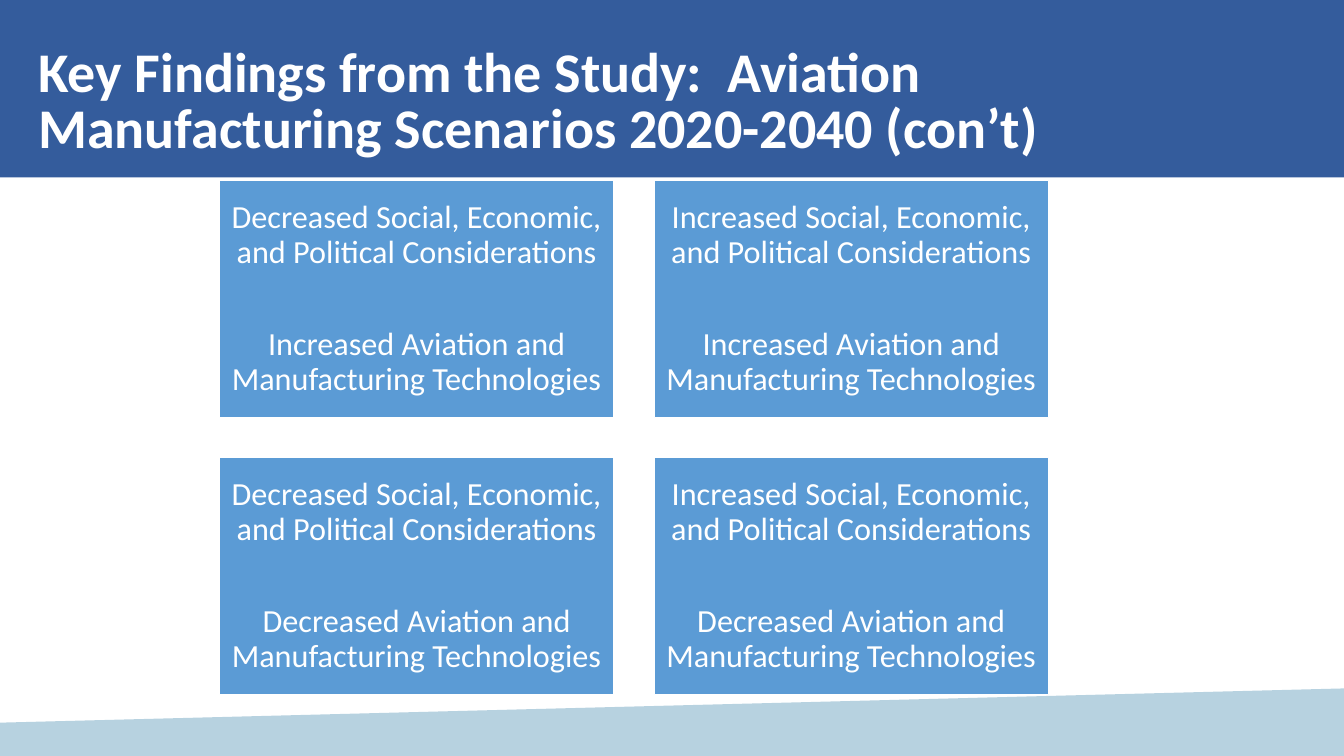
"""Build the slide of aviation manufacturing scenarios for 2020-2040."""
from dataclasses import dataclass
from itertools import product

from pptx import Presentation
from pptx.dml.color import RGBColor
from pptx.enum import shapes, text
from pptx.shapes.autoshape import Shape
from pptx.slide import Slide
from pptx.util import Inches, Pt


@dataclass(frozen=True)
class Theme:
    """Colours, font and type sizes of the slide."""

    band: RGBColor = RGBColor(0x34, 0x5C, 0x9C)
    footer: RGBColor = RGBColor(0xB7, 0xD2, 0xE0)
    card: RGBColor = RGBColor(0x5B, 0x9B, 0xD5)
    white: RGBColor = RGBColor(0xFF, 0xFF, 0xFF)
    font: str = "Calibri"
    title_size: Pt = Pt(40)
    card_size: Pt = Pt(23)
    factor_gap: Pt = Pt(41)


@dataclass(frozen=True)
class Scenario:
    """One quadrant: its grid cell and the trend of each factor."""

    column: int
    row: int
    social: str
    technology: str


THEME = Theme()
WIDTH, HEIGHT = 13.33, 7.5
CARD_WIDTH, CARD_HEIGHT, CARD_GAP = 3.91, 2.35, 0.4
GRID_LEFT, GRID_TOP = 2.18, 1.79
SCENARIOS = [
    Scenario(column, row, social, technology)
    for (row, technology), (column, social) in product(
        enumerate(("Increased", "Decreased")),
        enumerate(("Decreased", "Increased")),
    )
]


def paint(shape: Shape, colour: RGBColor) -> None:
    """Give a shape a flat fill with no outline or shadow."""
    shape.fill.solid()
    shape.fill.fore_color.rgb = colour
    shape.line.fill.background()
    shape.shadow.inherit = False


def draw_backdrop(slide: Slide) -> None:
    """Draw the slanted footer and the title band."""
    corners = [(WIDTH, 6.83), (WIDTH, HEIGHT), (0, HEIGHT)]
    outline = slide.shapes.build_freeform(Inches(0), Inches(7.17))
    outline.add_line_segments([(Inches(x), Inches(y)) for x, y in corners])
    paint(outline.convert_to_shape(), THEME.footer)
    band = slide.shapes.add_shape(
        shapes.MSO_SHAPE.RECTANGLE, 0, 0, Inches(WIDTH), Inches(1.76)
    )
    paint(band, THEME.band)


def set_title(slide: Slide, wording: str) -> None:
    """Place the title placeholder over the band and format it."""
    title = slide.shapes.title
    slide.shapes.element.append(title.element)
    title.left, title.top = Inches(0.38), Inches(0.4)
    title.width, title.height = Inches(12.04), Inches(1.25)
    frame = title.text_frame
    frame.text = wording
    frame.word_wrap = True
    frame.auto_size = text.MSO_AUTO_SIZE.NONE
    frame.vertical_anchor = text.MSO_ANCHOR.MIDDLE
    frame.margin_left = frame.margin_right = 0
    frame.margin_top = frame.margin_bottom = 0
    heading = frame.paragraphs[0]
    heading.alignment = text.PP_ALIGN.LEFT
    heading.line_spacing = Pt(40)
    font = heading.runs[0].font
    font.name, font.size, font.bold = THEME.font, THEME.title_size, True
    font.color.rgb = THEME.white


def draw_scenario(slide: Slide, scenario: Scenario) -> None:
    """Draw one scenario card in its grid cell."""
    card = slide.shapes.add_shape(
        shapes.MSO_SHAPE.RECTANGLE,
        Inches(GRID_LEFT + scenario.column * (CARD_WIDTH + CARD_GAP)),
        Inches(GRID_TOP + scenario.row * (CARD_HEIGHT + CARD_GAP)),
        Inches(CARD_WIDTH),
        Inches(CARD_HEIGHT),
    )
    paint(card, THEME.card)
    card.line.color.rgb = THEME.white
    card.line.width = Pt(1)
    frame = card.text_frame
    frame.text = (
        f"{scenario.social} Social, Economic, and Political Considerations\n"
        f"{scenario.technology} Aviation and Manufacturing Technologies"
    )
    frame.word_wrap = True
    frame.vertical_anchor = text.MSO_ANCHOR.MIDDLE
    frame.margin_left = frame.margin_right = Inches(0.1)
    frame.margin_top = frame.margin_bottom = Inches(0.1)
    for factor in frame.paragraphs:
        factor.alignment = text.PP_ALIGN.CENTER
        factor.line_spacing = 0.9
        font = factor.runs[0].font
        font.name, font.size = THEME.font, THEME.card_size
        font.color.rgb = THEME.white
    frame.paragraphs[1].space_before = THEME.factor_gap


def main() -> None:
    """Build and save the presentation."""
    deck = Presentation()
    deck.slide_width, deck.slide_height = Inches(WIDTH), Inches(HEIGHT)
    slide = deck.slides.add_slide(deck.slide_layouts.get_by_name("Title Only"))
    draw_backdrop(slide)
    set_title(
        slide,
        "Key Findings from the Study:  Aviation Manufacturing "
        "Scenarios 2020-2040 (con’t)",
    )
    for scenario in SCENARIOS:
        draw_scenario(slide, scenario)
    deck.save("out.pptx")


if __name__ == "__main__":
    main()
